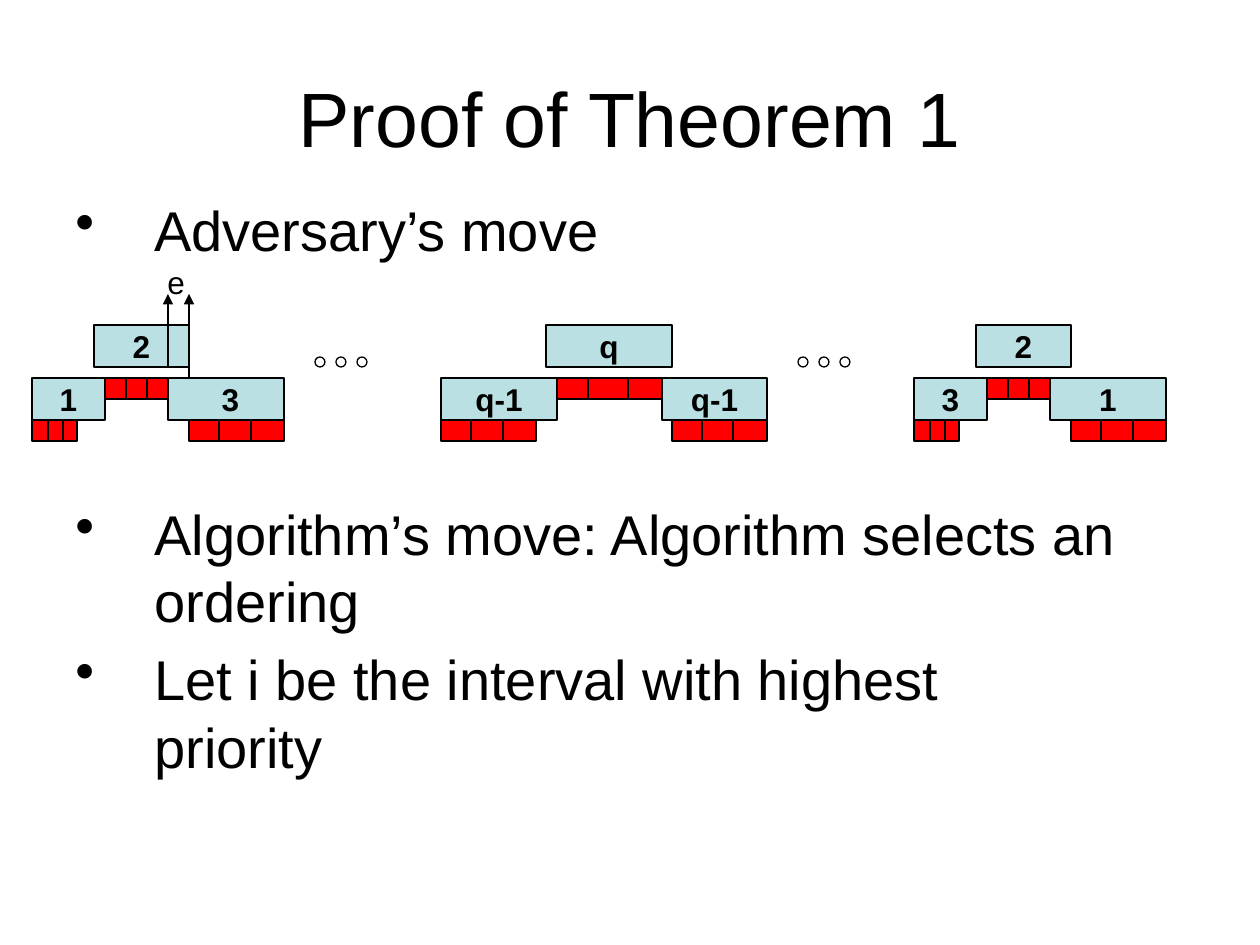
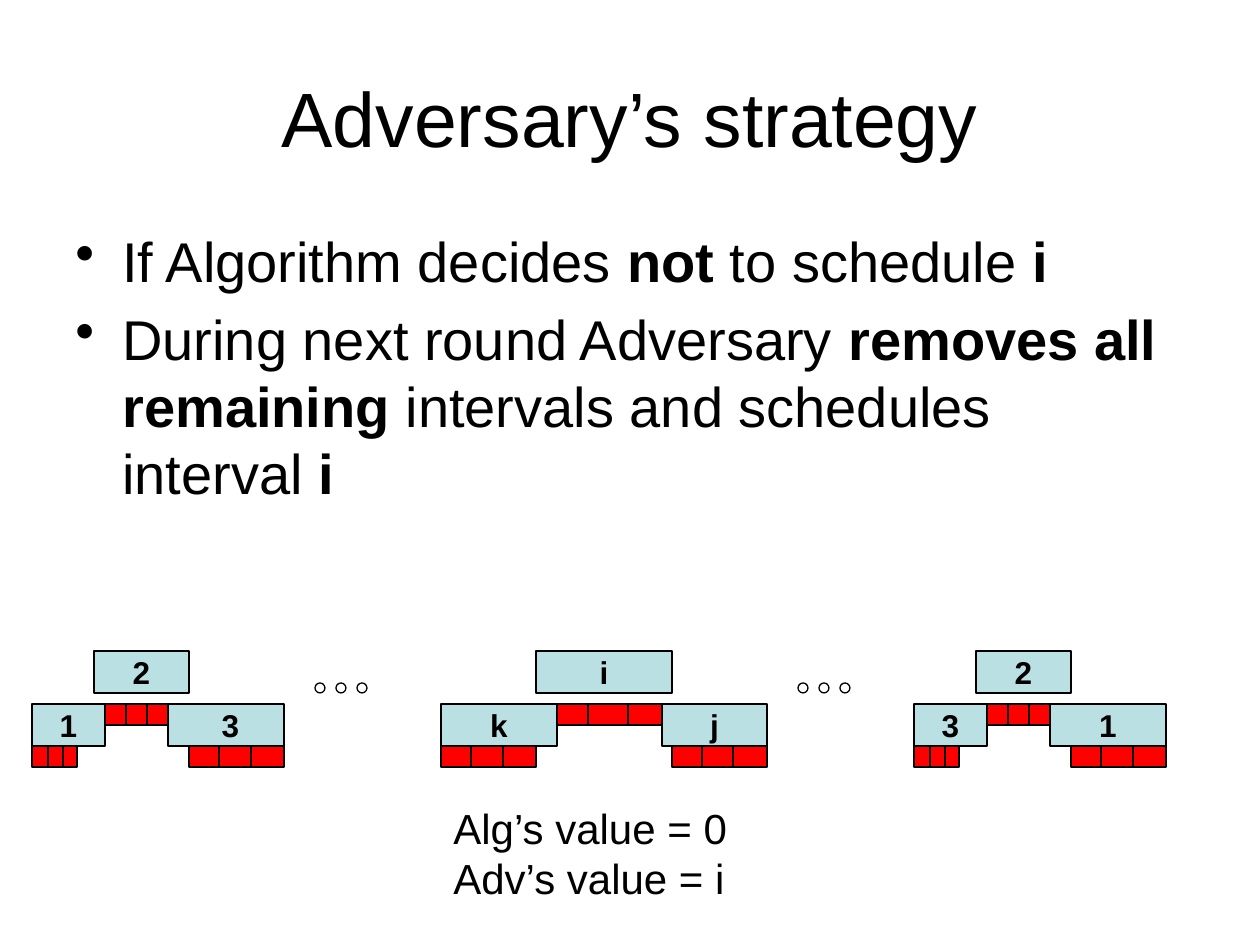
"""Build two slides on the interval scheduling adversary argument."""
import lxml.etree
import pptx
import pptx.dml.color
import pptx.enum.shapes
import pptx.enum.text
import pptx.oxml
import pptx.oxml.ns
import pptx.util

BLACK = pptx.dml.color.RGBColor(0x00, 0x00, 0x00)
WHITE = pptx.dml.color.RGBColor(0xFF, 0xFF, 0xFF)
INTERVAL_BLUE = pptx.dml.color.RGBColor(0xBB, 0xE0, 0xE3)
UNIT_RED = pptx.dml.color.RGBColor(0xFF, 0x00, 0x00)
FONT = "Arial"
PX = 914400 / 126
SHAPES = pptx.enum.shapes.MSO_SHAPE
ALIGN = pptx.enum.text.PP_ALIGN
ANCHOR = pptx.enum.text.MSO_ANCHOR

TITLE_BOX = (63, 38, 1134, 157)
BULLET_GAP = 11
DIAGRAM_GAP = 237
INTERVAL_HEIGHT = 42
UNIT_HEIGHT = 21
LOWER_ROW = 53
DOTS_TOP = 32
DOT_SIZE = 10
DOT_STEP = 21
DOT_STARTS = (315, 798)

END_TRIAD = {
    "left": (32, 73), "top": (94, 95), "right": (168, 116),
    "left_units": (32, 48, 63, 77),
    "top_units": (105, 126, 147, 168),
    "right_units": (189, 219, 251, 284),
}
MIDDLE_TRIAD = {
    "left": (441, 116), "top": (546, 126), "right": (662, 105),
    "left_units": (441, 471, 503, 536),
    "top_units": (557, 588, 628, 662),
    "right_units": (672, 702, 733, 767),
}
WIDE_MIDDLE_TRIAD = {**MIDDLE_TRIAD, "top": (536, 136)}
RIGHT_SHIFT = 882

SLIDES = [
    {
        "title": "Proof of Theorem 1",
        "body_box": (63, 189, 1071, 683),
        "indent": 79,
        "bullets": [
            (BULLET_GAP, [("Adversary’s move", False)]),
            (DIAGRAM_GAP, [("Algorithm’s move: Algorithm selects an ordering", False)]),
            (BULLET_GAP, [("Let i be the interval with highest priority", False)]),
        ],
        "diagram_top": 325,
        "middle": (MIDDLE_TRIAD, ("q-1", "q", "q-1")),
        "arrows": [(168, 368, 294), (189, 378, 294)],
        "note": ((155, 257, 43, 50), ["e"], 18),
    },
    {
        "title": "Adversary’s strategy",
        "body_box": (63, 220, 1134, 294),
        "indent": 47,
        "bullets": [
            (BULLET_GAP, [("If Algorithm decides ", False), ("not", True),
                          (" to schedule ", False), ("i", True)]),
            (BULLET_GAP, [("During next round Adversary ", False),
                          ("removes all remaining", True),
                          (" intervals and schedules interval ", False), ("i", True)]),
        ],
        "diagram_top": 651,
        "middle": (WIDE_MIDDLE_TRIAD, ("k", "i", "j")),
        "arrows": [],
        "note": ((441, 796, 300, 113), ["Alg’s value = 0", "Adv’s value = i"], 24),
    },
]


def px(length):
    return pptx.util.Emu(round(length * PX))


def place(box):
    return [px(length) for length in box]


def style(paragraph, size, bold=None):
    paragraph.font.name = FONT
    paragraph.font.size = pptx.util.Pt(size)
    paragraph.font.bold = bold
    paragraph.font.color.rgb = BLACK


def add_text(slide, box, lines, size, wrap=False):
    frame = slide.shapes.add_textbox(*place(box)).text_frame
    frame.word_wrap = wrap
    frame.text = "\n".join(lines)
    for paragraph in frame.paragraphs:
        style(paragraph, size)
    return frame


def add_title(slide, title):
    frame = add_text(slide, TITLE_BOX, [title], 44, wrap=True)
    frame.vertical_anchor = ANCHOR.MIDDLE
    frame.paragraphs[0].alignment = ALIGN.CENTER


def add_bullets(slide, box, indent, bullets):
    frame = slide.shapes.add_textbox(*place(box)).text_frame
    frame.word_wrap = True
    for index, (gap, runs) in enumerate(bullets):
        paragraph = frame.add_paragraph() if index else frame.paragraphs[0]
        style(paragraph, 32)
        paragraph.space_before = px(gap)
        for text, bold in runs:
            run = paragraph.add_run()
            run.text = text
            run.font.bold = bold
        properties = paragraph._p.get_or_add_pPr()
        properties.set("marL", str(px(indent)))
        properties.set("indent", str(-px(indent)))
        bullet = pptx.oxml.ns.qn("a:buChar")
        mark = properties.makeelement(bullet, {"char": "•"})
        properties.insert_element_before(mark, "a:tabLst", "a:defRPr", "a:extLst")


def add_block(slide, kind, box, fill, label=None):
    shape = slide.shapes.add_shape(kind, *place(box))
    shape.shadow.inherit = False
    shape.fill.solid()
    shape.fill.fore_color.rgb = fill
    shape.line.color.rgb = BLACK
    shape.line.width = pptx.util.Pt(0.75)
    if label:
        frame = shape.text_frame
        frame.word_wrap = False
        frame.vertical_anchor = ANCHOR.MIDDLE
        frame.text = label
        frame.paragraphs[0].alignment = ALIGN.CENTER
        style(frame.paragraphs[0], 18, bold=True)


def add_triad(slide, triad, labels, top, shift=0):
    lower = top + LOWER_ROW
    rows = {"left": lower, "top": top, "right": lower}
    for (part, row), label in zip(rows.items(), labels):
        left, width = triad[part]
        box = (left + shift, row, width, INTERVAL_HEIGHT)
        add_block(slide, SHAPES.FLOWCHART_PROCESS, box, INTERVAL_BLUE, label)
    for part, row in rows.items():
        unit_top = lower if part == "top" else row + INTERVAL_HEIGHT
        edges = triad[part + "_units"]
        for start, end in zip(edges, edges[1:]):
            box = (start + shift, unit_top, end - start, UNIT_HEIGHT)
            add_block(slide, SHAPES.FLOWCHART_PROCESS, box, UNIT_RED)


def add_diagram(slide, top, middle, middle_labels):
    add_triad(slide, END_TRIAD, ("1", "2", " 3"), top)
    add_triad(slide, middle, middle_labels, top)
    add_triad(slide, END_TRIAD, ("3", "2", "1"), top, RIGHT_SHIFT)
    for start in DOT_STARTS:
        for index in range(3):
            box = (start + index * DOT_STEP, top + DOTS_TOP, DOT_SIZE, DOT_SIZE)
            add_block(slide, SHAPES.FLOWCHART_CONNECTOR, box, WHITE)


def add_arrow(slide, x, start, end):
    arrow = slide.shapes.add_connector(
        pptx.enum.shapes.MSO_CONNECTOR.STRAIGHT, px(x), px(start), px(x), px(end))
    arrow.line.color.rgb = BLACK
    arrow.line.width = pptx.util.Pt(0.75)
    qn = pptx.oxml.ns.qn
    lxml.etree.SubElement(arrow.line._get_or_add_ln(), qn("a:tailEnd"), type="triangle")
    lxml.etree.SubElement(arrow._element.spPr, qn("a:effectLst"))


def main():
    presentation = pptx.Presentation()
    presentation.slide_width = px(1260)
    presentation.slide_height = px(945)
    for content in SLIDES:
        slide = presentation.slides.add_slide(presentation.slide_layouts[6])
        add_title(slide, content["title"])
        add_bullets(slide, content["body_box"], content["indent"], content["bullets"])
        add_diagram(slide, content["diagram_top"], *content["middle"])
        for arrow in content["arrows"]:
            add_arrow(slide, *arrow)
        add_text(slide, *content["note"])
    presentation.save("out.pptx")


if __name__ == "__main__":
    main()
